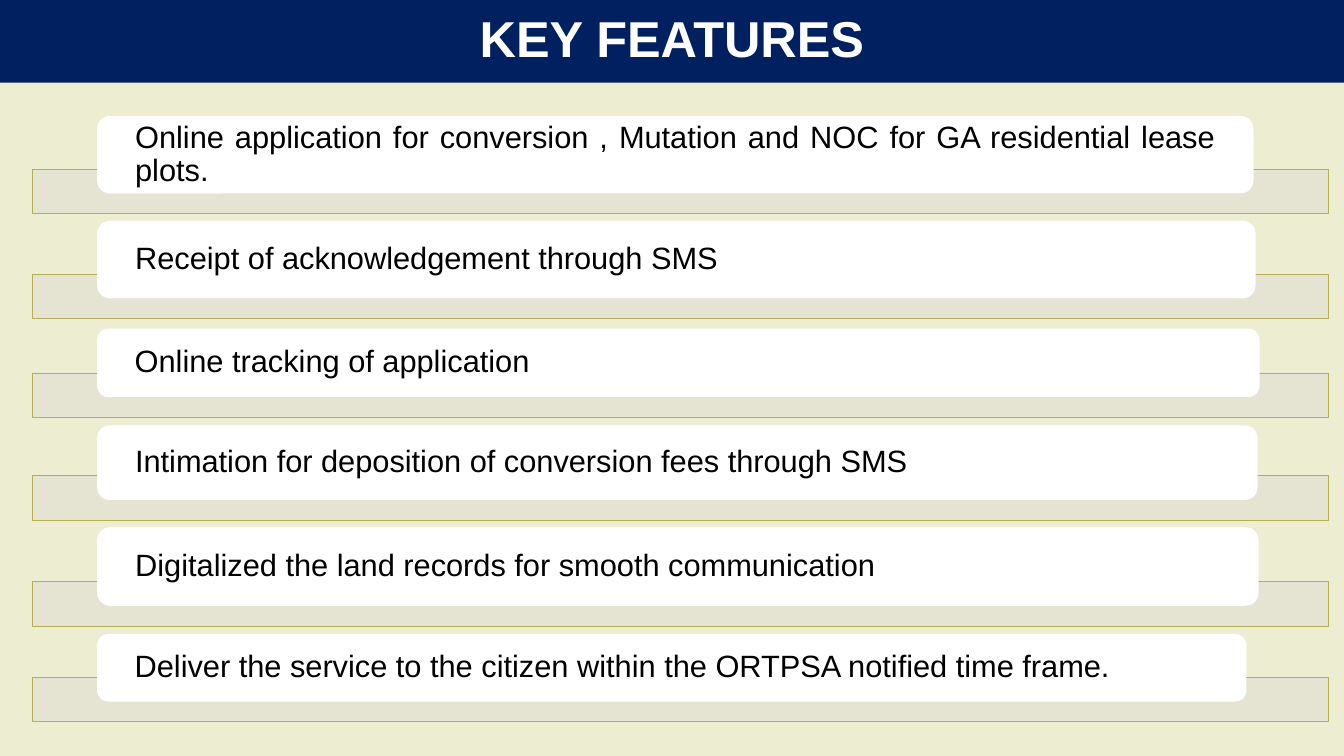
from lxml import etree
from pptx import Presentation
from pptx.dml.color import RGBColor
from pptx.enum.shapes import MSO_SHAPE
from pptx.enum.text import MSO_ANCHOR, PP_ALIGN
from pptx.oxml.ns import qn
from pptx.util import Inches, Pt

NAVY = RGBColor(0x00, 0x20, 0x60)
CREAM = RGBColor(0xEC, 0xED, 0xD1)
SAND = RGBColor(0xE5, 0xE3, 0xD1)
OLIVE = RGBColor(0xB5, 0xAE, 0x53)
WHITE = RGBColor(0xFF, 0xFF, 0xFF)
BLACK = RGBColor(0x00, 0x00, 0x00)

SLIDE_W, SLIDE_H = 13.33, 7.5
TITLE_H = 0.82
LIST_LEFT, LIST_W = 0.32, 12.86
BAR_H = 0.44
CARD_INDENT = LIST_W * 0.05
BAR_BELOW_CARD = 0.2

# Wording, card top, card width, card height
FEATURES = [
    ("Online application for conversion , Mutation and NOC for GA residential lease plots.",
     1.15, 11.47, 0.77),
    ("Receipt of acknowledgement through SMS", 2.19, 11.49, 0.77),
    ("Online tracking of application", 3.26, 11.53, 0.68),
    ("Intimation for deposition of conversion fees through SMS", 4.22, 11.51, 0.74),
    ("Digitalized the land records for smooth communication", 5.23, 11.52, 0.78),
    ("Deliver the service to the citizen within the ORTPSA notified time frame.",
     6.29, 11.4, 0.67),
]


def add_panel(slide, kind, left, top, width, height, fill):
    panel = slide.shapes.add_shape(
        kind, Inches(left), Inches(top), Inches(width), Inches(height))
    panel.shadow.inherit = False
    panel.fill.solid()
    panel.fill.fore_color.rgb = fill
    panel.line.fill.background()
    return panel


def write_text(panel, wording, size, color, align, side_inset, end_inset, bold=False):
    frame = panel.text_frame
    frame.word_wrap = True
    frame.vertical_anchor = MSO_ANCHOR.MIDDLE
    frame.margin_left = frame.margin_right = Inches(side_inset)
    frame.margin_top = frame.margin_bottom = Inches(end_inset)
    paragraph = frame.paragraphs[0]
    paragraph.text = wording
    paragraph.alignment = align
    paragraph.line_spacing = 0.9
    paragraph.font.name = "Arial"
    paragraph.font.size = Pt(size)
    paragraph.font.bold = bold
    paragraph.font.color.rgb = color


def add_title(slide, left, top, width, height):
    banner = add_panel(slide, MSO_SHAPE.RECTANGLE, left, top, width, height, NAVY)
    write_text(banner, "KEY FEATURES", 36, WHITE, PP_ALIGN.CENTER, 0.1, 0.05, bold=True)


def add_feature(slide, wording, left, top, width, card_width, card_height):
    # Bar behind the card, reaching a fixed distance below it
    bar_top = top + card_height + BAR_BELOW_CARD - BAR_H
    bar = add_panel(slide, MSO_SHAPE.RECTANGLE, left, bar_top, width, BAR_H, SAND)
    bar.line.color.rgb = OLIVE
    bar.line.width = Pt(0.5)
    bar_color = bar.fill._xPr.find(qn("a:solidFill"))[0]
    etree.SubElement(bar_color, qn("a:alpha"), val="90000")

    # Rounded card with the wording
    card = add_panel(slide, MSO_SHAPE.ROUNDED_RECTANGLE, left + CARD_INDENT, top,
                     card_width, card_height, WHITE)
    write_text(card, wording, 22, BLACK, PP_ALIGN.JUSTIFY, 0.34, 0)


def main():
    prs = Presentation()
    prs.slide_width, prs.slide_height = Inches(SLIDE_W), Inches(SLIDE_H)
    slide = prs.slides.add_slide(prs.slide_layouts[6])
    slide.background.fill.solid()
    slide.background.fill.fore_color.rgb = CREAM

    add_title(slide, 0, 0, SLIDE_W, TITLE_H)
    for wording, top, card_width, card_height in FEATURES:
        add_feature(slide, wording, LIST_LEFT, top, LIST_W, card_width, card_height)

    prs.save("out.pptx")


if __name__ == "__main__":
    main()
